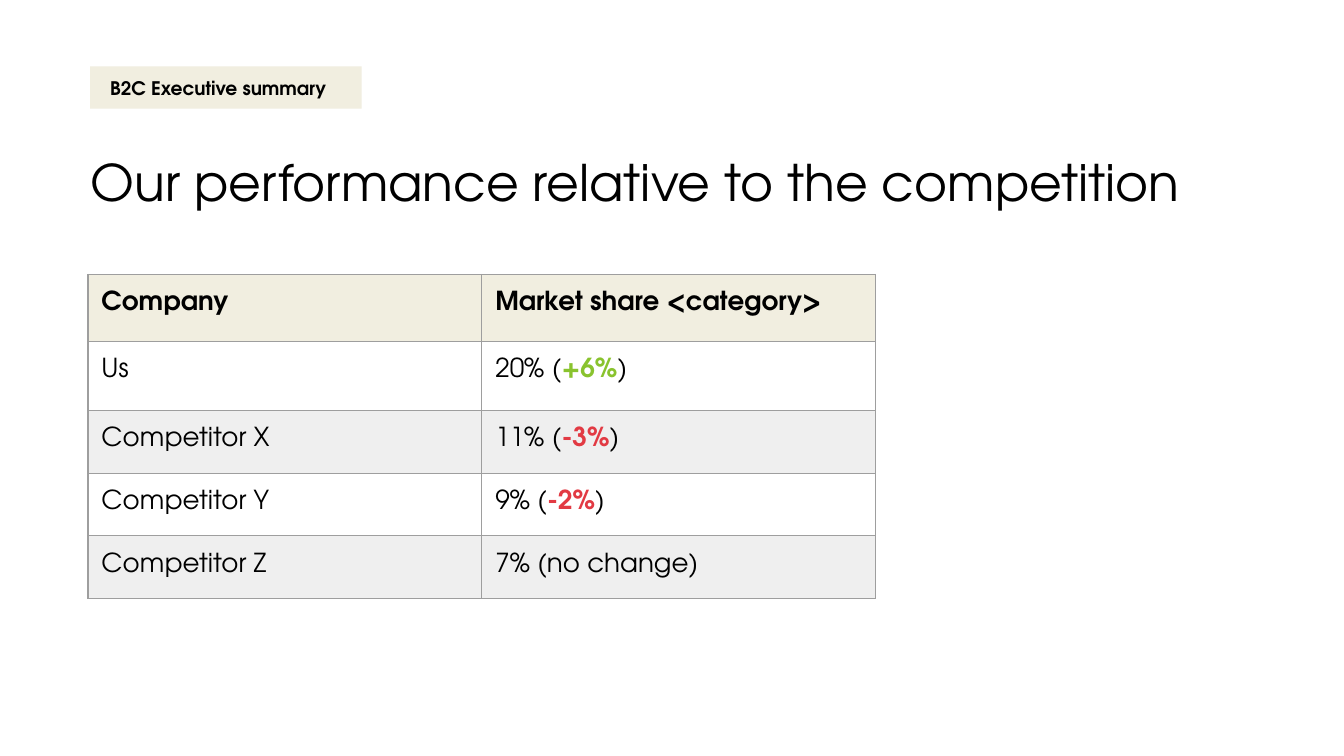
from lxml.etree import SubElement
from pptx import Presentation
from pptx.dml.color import RGBColor
from pptx.enum.shapes import MSO_SHAPE
from pptx.enum.text import MSO_ANCHOR, PP_ALIGN
from pptx.oxml.ns import qn
from pptx.util import Inches, Pt

SLIDE_WIDTH = Inches(10)
SLIDE_HEIGHT = SLIDE_WIDTH * 9 // 16
FONT_NAME = "TeX Gyre Adventor"
BLACK = RGBColor(0x00, 0x00, 0x00)
CREAM = RGBColor(0xF1, 0xEE, 0xE0)
BAND = RGBColor(0xEF, 0xEF, 0xEF)
BORDER = RGBColor(0x9E, 0x9E, 0x9E)
GREEN = RGBColor(0x89, 0xC3, 0x2E)
RED = RGBColor(0xE2, 0x3A, 0x43)

COLUMN_SHARE = 29.3
ROW_SHARES = [8.9, 9.1, 8.3, 8.3, 8.3]
MARKET_SHARES = [
    [["Company"], ["Market share <category>"]],
    [["Us"], ["20% (", ("+6%", GREEN), ")"]],
    [["Competitor X"], ["11% (", ("-3%", RED), ")"]],
    [["Competitor Y"], ["9% (", ("-2%", RED), ")"]],
    [["Competitor Z"], ["7% (no change)"]],
]


def across(percent):
    """Return a share of the slide's width."""
    return round(SLIDE_WIDTH * percent / 100)


def down(percent):
    """Return a share of the slide's height."""
    return round(SLIDE_HEIGHT * percent / 100)


def apply_format(target, values):
    """Set each named attribute of the target."""
    for name, value in values.items():
        setattr(target, name, value)


def margins(size, left=None):
    """Return equal text margins, with an optional wider left one."""
    values = {f"margin_{side}": Inches(size) for side in ("left", "top", "right", "bottom")}
    if left is not None:
        values["margin_left"] = Inches(left)
    return values


def add_run(paragraph, text, size, bold=False, color=BLACK):
    """Add a formatted run to the paragraph."""
    run = paragraph.add_run()
    run.text = text
    apply_format(run.font, {"name": FONT_NAME, "size": Pt(size), "bold": bold})
    run.font.color.rgb = color


def write_line(shape, text, size, bold=False, left=0.07):
    """Write one left-aligned, vertically centred line in the shape."""
    frame = shape.text_frame
    apply_format(frame, {"word_wrap": True, "vertical_anchor": MSO_ANCHOR.MIDDLE, **margins(0.07, left)})
    paragraph = frame.paragraphs[0]
    paragraph.alignment = PP_ALIGN.LEFT
    add_run(paragraph, text, size, bold)


def set_title(slide, text):
    """Place and fill the title placeholder."""
    title = slide.shapes.title
    apply_format(title, {"left": across(6.05), "top": down(18.9), "width": across(83.7), "height": down(10.1)})
    write_line(title, text, 27)


def add_tag(slide, text):
    """Add the section tag above the title."""
    tag = slide.shapes.add_shape(MSO_SHAPE.RECTANGLE, across(6.7), down(8.8), across(20.2), down(5.6))
    tag.shadow.inherit = False
    tag.fill.solid()
    tag.fill.fore_color.rgb = CREAM
    tag.line.fill.background()
    write_line(tag, text, 10, bold=True, left=0.15)


def add_borders(cell):
    """Draw a thin line on all four sides of the cell."""
    properties = cell._tc.get_or_add_tcPr()
    for side in ("L", "R", "T", "B"):
        line = SubElement(properties, qn(f"a:ln{side}"), w=str(Pt(0.75)))
        fill = SubElement(line, qn("a:solidFill"))
        SubElement(fill, qn("a:srgbClr"), val=str(BORDER))


def fill_cell(cell, parts, background, bold):
    """Format a cell and write its text parts."""
    apply_format(cell, {"vertical_anchor": MSO_ANCHOR.TOP, **margins(0.1)})
    add_borders(cell)
    if background is None:
        cell.fill.background()
    else:
        cell.fill.solid()
        cell.fill.fore_color.rgb = background
    paragraph = cell.text_frame.paragraphs[0]
    paragraph.line_spacing = 1.15
    for part in parts:
        if isinstance(part, tuple):
            text, color = part
            add_run(paragraph, text, 14, True, color)
        else:
            add_run(paragraph, part, 14, bold)


def add_market_table(slide):
    """Add the market share table with a header and banded rows."""
    column_count = len(MARKET_SHARES[0])
    table = slide.shapes.add_table(
        len(MARKET_SHARES), column_count, across(6.55), down(36.3),
        across(COLUMN_SHARE * column_count), down(sum(ROW_SHARES)),
    ).table
    table.horz_banding = False
    for column in table.columns:
        column.width = across(COLUMN_SHARE)
    for row_index, (row, share, contents) in enumerate(zip(table.rows, ROW_SHARES, MARKET_SHARES)):
        row.height = down(share)
        is_header = row_index == 0
        background = CREAM if is_header else (None if row_index % 2 else BAND)
        for cell, parts in zip(row.cells, contents):
            fill_cell(cell, parts, background, is_header)


def main():
    """Build and save the presentation."""
    presentation = Presentation()
    apply_format(presentation, {"slide_width": SLIDE_WIDTH, "slide_height": SLIDE_HEIGHT})
    slide = presentation.slides.add_slide(presentation.slide_layouts[5])
    add_market_table(slide)
    set_title(slide, "Our performance relative to the competition")
    add_tag(slide, "B2C Executive summary")
    presentation.save("out.pptx")


if __name__ == "__main__":
    main()
